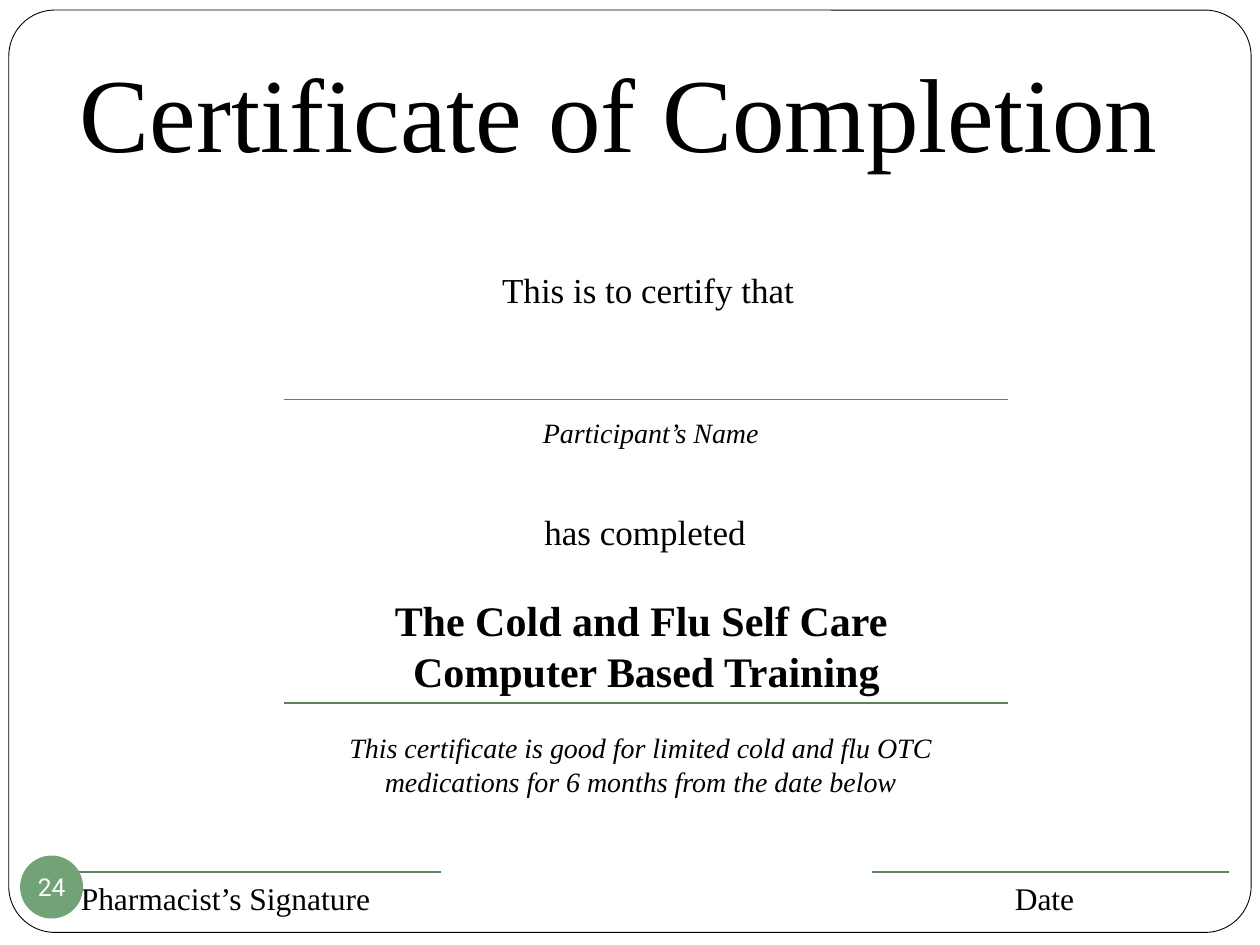
from collections import namedtuple

from lxml import etree
from pptx import Presentation
from pptx.dml.color import RGBColor
from pptx.enum.shapes import MSO_CONNECTOR, MSO_SHAPE
from pptx.enum.text import MSO_ANCHOR, PP_ALIGN
from pptx.oxml.ns import qn
from pptx.util import Emu, Pt

STRAIGHT = MSO_CONNECTOR.STRAIGHT
ROUNDED, OVAL = MSO_SHAPE.ROUNDED_RECTANGLE, MSO_SHAPE.OVAL
TOP, MIDDLE = MSO_ANCHOR.TOP, MSO_ANCHOR.MIDDLE
CENTER = PP_ALIGN.CENTER

EMU_PER_PX = 9144
TITLE_ONLY = 5
SERIF, SANS = "Times New Roman", "Roboto"
COLORS = {"paper": "FFFFFF", "ink": "000000", "rule": "59845D", "badge": "72A376"}

Box = namedtuple("Box", "left top width height")


def px(length):
    return Emu(length * EMU_PER_PX)


def color(name):
    return RGBColor.from_string(COLORS[name])


def inside(box, left, top, width, height):
    return Box(box.left + left, box.top + top, width, height)


def place(shape, box):
    shape.left, shape.top, shape.width, shape.height = map(px, box)


def write(shape, text, size, font=SERIF, ink="ink", bold=False, italic=False,
          wrap=True, anchor=TOP):
    frame = shape.text_frame
    frame.text = text
    frame.word_wrap = wrap
    frame.vertical_anchor = anchor
    for paragraph in frame.paragraphs:
        paragraph.alignment = CENTER
        for run in paragraph.runs:
            run.font.name = font
            run.font.size = Pt(size)
            run.font.bold = bold
            run.font.italic = italic
            run.font.color.rgb = color(ink)


def add_label(slide, box, text, size, **style):
    label = slide.shapes.add_textbox(*map(px, box))
    write(label, text, size, **style)


def add_rule(slide, left, top, width):
    rule = slide.shapes.add_connector(
        STRAIGHT, px(left), px(top), px(left + width), px(top))
    rule.line.color.rgb = color("rule")
    rule.line.width = Pt(0.75)
    etree.SubElement(rule.element.spPr, qn("a:effectLst"))


def add_filled(slide, kind, box, fill):
    shape = slide.shapes.add_shape(kind, *map(px, box))
    shape.shadow.inherit = False
    shape.fill.solid()
    shape.fill.fore_color.rgb = color(fill)
    return shape


def add_border(slide, box):
    border = add_filled(slide, ROUNDED, box, "paper")
    border.adjustments[0] = 0.05
    border.line.color.rgb = color("ink")
    border.line.width = Pt(0.5)
    slide.shapes.title.element.addprevious(border.element)


def add_heading(slide, box):
    title = slide.shapes.title
    place(title, box)
    write(title, "Certificate of Completion", 60)


def add_statement(slide, box):
    for top in (109, 350):
        add_rule(slide, box.left + 8, box.top + top, 575)
    add_label(slide, inside(box, 171, 0, 253, 44),
              "This is to certify that", 20, wrap=False)
    add_label(slide, inside(box, 158, 117, 283, 37),
              "Participant’s Name", 16, italic=True)
    add_label(slide, inside(box, 191, 192, 208, 44), "has completed", 20)
    add_label(slide, inside(box, 50, 259, 492, 91),
              "The Cold and Flu Self Care \nComputer Based Training", 24, bold=True)
    add_label(slide, inside(box, 0, 367, 583, 64),
              "This certificate is good for limited cold and flu OTC "
              "medications for 6 months from the date below", 16, italic=True)


def add_signature(slide, box, text, label_left, label_width):
    add_rule(slide, box.left, box.top, box.width)
    add_label(slide, inside(box, label_left, 1, label_width, 40), text, 18)


def add_page_badge(slide, box, number):
    badge = add_filled(slide, OVAL, box, "badge")
    badge.line.fill.background()
    write(badge, number, 14, font=SANS, ink="paper", wrap=False, anchor=MIDDLE)
    frame = badge.text_frame
    frame.margin_left = frame.margin_right = 0
    frame.margin_top = frame.margin_bottom = 0


def main():
    presentation = Presentation()
    presentation.slide_width, presentation.slide_height = px(1000), px(750)
    slide = presentation.slides.add_slide(presentation.slide_layouts[TITLE_ONLY])

    add_border(slide, Box(7, 8, 986, 732))
    add_heading(slide, Box(50, 33, 883, 111))
    add_statement(slide, Box(217, 208, 583, 431))
    add_signature(slide, Box(33, 692, 317, 41), "Pharmacist’s Signature", 17, 258)
    add_signature(slide, Box(692, 692, 283, 41), "Date", 33, 208)
    add_page_badge(slide, Box(16, 679, 50, 50), "24")

    presentation.save("out.pptx")


if __name__ == "__main__":
    main()
